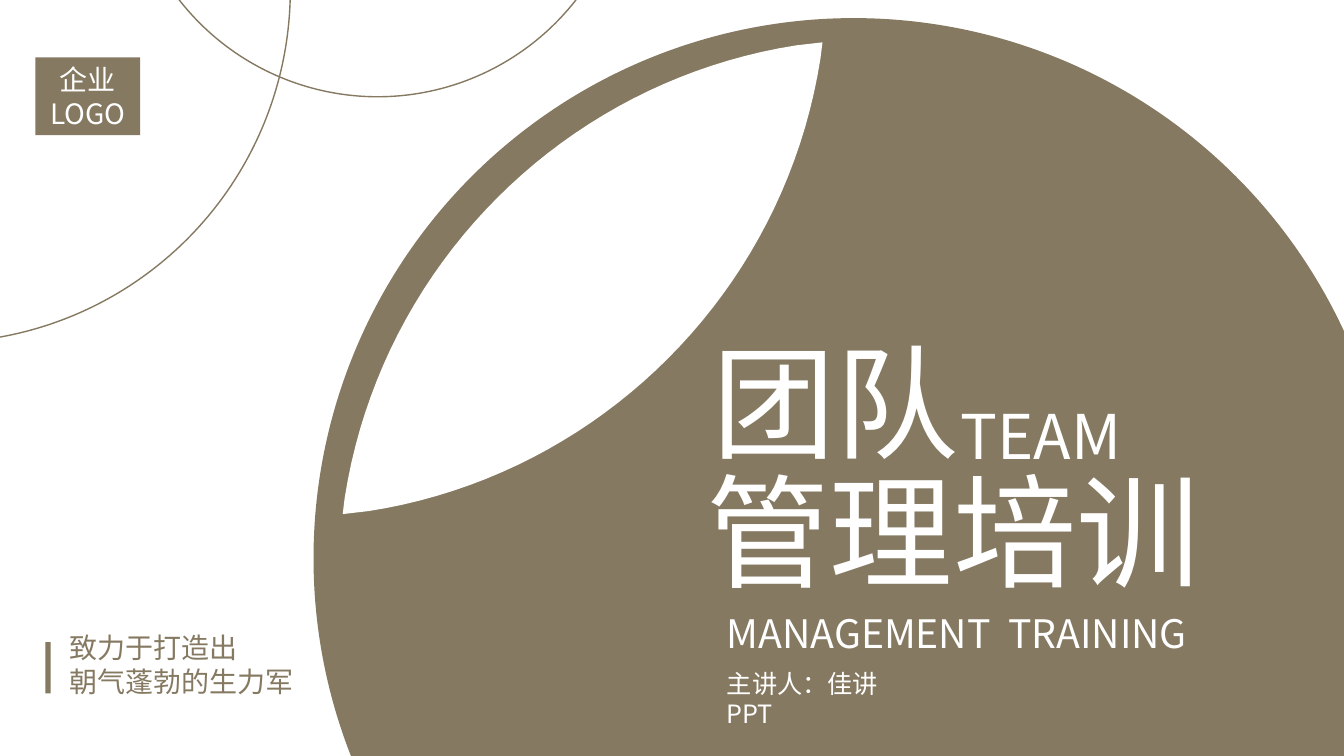
"""Build the cover slide of a team management training deck."""
from dataclasses import dataclass
from typing import Optional

from lxml import etree
from pptx import Presentation
from pptx import util as u
from pptx.dml.color import RGBColor
from pptx.enum import shapes, text
from pptx.oxml.ns import qn


@dataclass(frozen=True)
class Theme:
    """Colours, font and type sizes in points."""
    brown: RGBColor = RGBColor(0x85, 0x79, 0x61)
    white: RGBColor = RGBColor(0xFF, 0xFF, 0xFF)
    font: str = "Noto Sans CJK SC"
    display: int = 88
    accent: int = 44
    subtitle: int = 28
    note: int = 20
    small: int = 18
    leading: float = 1.2


@dataclass(frozen=True)
class Box:
    """A rectangle in percent of the slide's width and height."""
    left: float
    top: float
    width: float
    height: float


@dataclass(frozen=True)
class Figure:
    """A preset shape, filled or outlined."""
    kind: shapes.MSO_SHAPE
    box: Box
    filled: bool = True


@dataclass(frozen=True)
class Label:
    """A text with its place, size and colour."""
    words: str
    box: Box
    size: int
    color: RGBColor
    holder: Optional[int] = None
    right_inset: float = 0.75


THEME = Theme()
WIDTH, HEIGHT = u.Inches(13.333), u.Inches(7.5)
OVAL, RECT = shapes.MSO_SHAPE.OVAL, shapes.MSO_SHAPE.RECTANGLE

DISC = Figure(OVAL, Box(23.33, 2.4, 80.4, 142.93))
FIGURES = [
    Figure(OVAL, Box(9.38, -53.73, 37.43, 66.53), filled=False),
    Figure(OVAL, Box(-30.9, -48, 52.5, 93.33), filled=False),
    Figure(RECT, Box(3.38, 84.93, 0.38, 6.8)),
]
BADGE = Figure(RECT, Box(2.63, 7.6, 7.8, 10.27))

LEAF_TIP = (61.2, 5.6)
LEAF_CURVE = [(61.05, 7.73), (58.35, 38.53), (44.7, 62.8), (27.45, 67.6)]
LEAF_MIRROR = (86.7, 73.6)
LEAF_STEPS = 40

LABELS = [
    Label("团队", Box(52.28, 42.53, 48.98, 21.07), THEME.display, THEME.white),
    Label("TEAM", Box(70.73, 52, 17.33, 11.2), THEME.accent, THEME.white),
    Label("管理培训", Box(51.83, 59.6, 38.7, 21.07), THEME.display, THEME.white, holder=0),
    Label("MANAGEMENT  TRAINING", Box(53.33, 79.87, 45.3, 7.6), THEME.subtitle,
          THEME.white, holder=1),
    Label("致力于打造出\n朝气蓬勃的生力军", Box(4.43, 82.8, 20.03, 10.27), THEME.note, THEME.brown),
    Label("主讲人：佳讲PPT", Box(53.33, 87.73, 16.43, 5.33), THEME.small, THEME.white,
          right_inset=2.25),
]


def x(share: float) -> int:
    """Turn a percentage of the slide's width into EMU."""
    return round(WIDTH * share / 100)


def y(share: float) -> int:
    """Turn a percentage of the slide's height into EMU."""
    return round(HEIGHT * share / 100)


def place(box: Box) -> tuple[int, int, int, int]:
    """Return left, top, width and height in EMU."""
    return x(box.left), y(box.top), x(box.width), y(box.height)


def write(tf, words: str, size: int, color: RGBColor, align: text.PP_ALIGN,
          anchor: text.MSO_ANCHOR, right_inset: float = 0.75) -> None:
    """Fill a text frame and format its paragraphs and runs."""
    tf.text = words
    tf.word_wrap = True
    tf.auto_size = text.MSO_AUTO_SIZE.NONE
    tf.vertical_anchor = anchor
    tf.margin_left, tf.margin_right = x(0.75), x(right_inset)
    tf.margin_top = tf.margin_bottom = u.Inches(0.05)
    for p in tf.paragraphs:
        p.alignment = align
        p.space_before = p.space_after = u.Pt(0)
        p.line_spacing = u.Pt(size * THEME.leading)
        for r in p.runs:
            r.font.size = u.Pt(size)
            r.font.name = THEME.font
            r.font.bold = False
            r.font.color.rgb = color
            ea = etree.SubElement(r.font._element, qn("a:ea"))
            ea.set("typeface", THEME.font)


def draw_figure(s, figure: Figure):
    """Add a brown shape or a brown outline."""
    sp = s.shapes.add_shape(figure.kind, *place(figure.box))
    sp.shadow.inherit = False
    if figure.filled:
        sp.fill.solid()
        sp.fill.fore_color.rgb = THEME.brown
        sp.line.fill.background()
    else:
        sp.fill.background()
        sp.line.color.rgb = THEME.brown
        sp.line.width = u.Pt(1)
    return sp


def curve_point(t: float) -> tuple[float, float]:
    """Return the point of the leaf's cubic curve at t."""
    weights = ((1 - t) ** 3, 3 * t * (1 - t) ** 2, 3 * t * t * (1 - t), t ** 3)
    px, py = (sum(w * c for w, c in zip(weights, axis)) for axis in zip(*LEAF_CURVE))
    return px, py


def draw_leaf(s) -> None:
    """Add the white leaf, whose upper edge mirrors its lower edge."""
    lower = [LEAF_TIP] + [curve_point(i / LEAF_STEPS) for i in range(LEAF_STEPS + 1)]
    upper = [(LEAF_MIRROR[0] - px, LEAF_MIRROR[1] - py) for px, py in lower]
    outline = [(x(px), y(py)) for px, py in lower + upper]
    builder = s.shapes.build_freeform(*outline[0])
    builder.add_line_segments(outline[1:], close=True)
    sp = builder.convert_to_shape()
    sp.shadow.inherit = False
    sp.fill.solid()
    sp.fill.fore_color.rgb = THEME.white
    sp.line.fill.background()


def draw_label(s, label: Label) -> None:
    """Write a label in its placeholder or in a new text box."""
    if label.holder is None:
        sp = s.shapes.add_textbox(*place(label.box))
    else:
        sp = s.placeholders[label.holder]
        sp.left, sp.top, sp.width, sp.height = place(label.box)
        sp.element.getparent().append(sp.element)
    write(sp.text_frame, label.words, label.size, label.color, text.PP_ALIGN.LEFT,
          text.MSO_ANCHOR.TOP, label.right_inset)


def main() -> None:
    """Draw the cover and save it."""
    prs = Presentation()
    prs.slide_width, prs.slide_height = WIDTH, HEIGHT
    s = prs.slides.add_slide(prs.slide_layouts[0])
    draw_figure(s, DISC)
    draw_leaf(s)
    for figure in FIGURES:
        draw_figure(s, figure)
    badge = draw_figure(s, BADGE)
    write(badge.text_frame, "企业\nLOGO", THEME.note, THEME.white, text.PP_ALIGN.CENTER,
          text.MSO_ANCHOR.MIDDLE)
    for label in LABELS:
        draw_label(s, label)
    prs.save("out.pptx")


if __name__ == "__main__":
    main()
